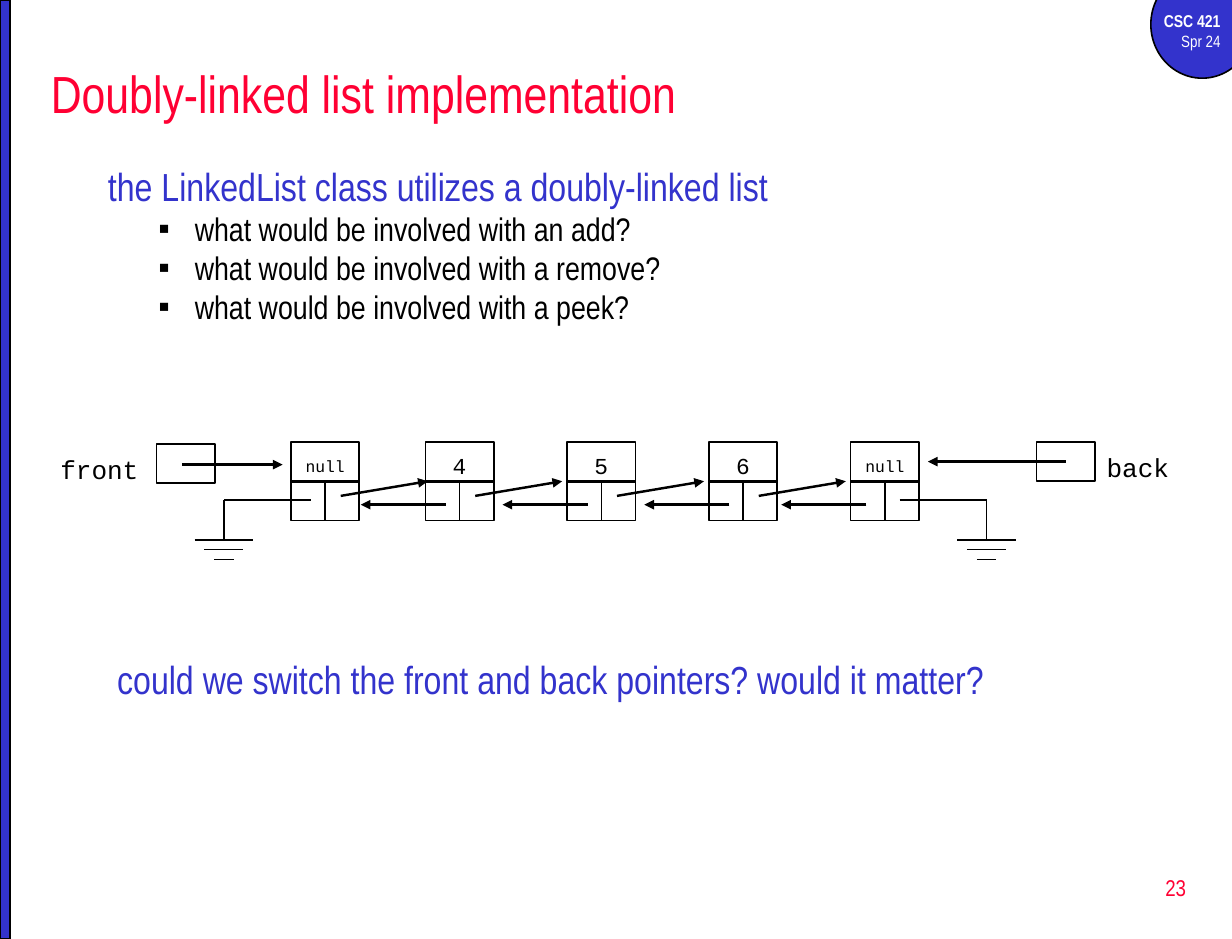
"""Build the slide on a doubly-linked list implementation."""
from dataclasses import dataclass

from lxml import etree
from pptx import Presentation
from pptx.dml.color import RGBColor
from pptx.enum.shapes import MSO_CONNECTOR, MSO_SHAPE
from pptx.enum.text import MSO_ANCHOR, MSO_AUTO_SIZE, PP_ALIGN
from pptx.oxml.ns import qn
from pptx.util import Inches, Pt

RECT, OVAL = MSO_SHAPE.RECTANGLE, MSO_SHAPE.OVAL
STRAIGHT = MSO_CONNECTOR.STRAIGHT
TOP, MIDDLE = MSO_ANCHOR.TOP, MSO_ANCHOR.MIDDLE
LEFT, CENTER, RIGHT = PP_ALIGN.LEFT, PP_ALIGN.CENTER, PP_ALIGN.RIGHT
NO_FIT = MSO_AUTO_SIZE.NONE
COLS, ROWS = 126, 96


@dataclass(frozen=True)
class Theme:
    """Colours, fonts and type sizes."""
    blue: str = "3333CC"
    red: str = "FF0033"
    black: str = "000000"
    white: str = "FFFFFF"
    sans: str = "Arial Narrow"
    mono: str = "Courier New"
    title: float = 32
    head: float = 24
    item: float = 20
    label: float = 16
    value: float = 14
    badge: float = 10.5
    small: float = 10
    thin: float = 1
    thick: float = 1.5


class Deck:
    """Style, current slide and one method per kind of element."""

    def __init__(self, prs, theme):
        self.t = theme
        self.s = prs.slides.add_slide(prs.slide_layouts[1])
        self.cw, self.rh = prs.slide_width / COLS, prs.slide_height / ROWS

    def pos(self, x, y):
        return round(x * self.cw), round(y * self.rh)

    def frame(self, sp, anchor=TOP, top=0.05, bottom=0.05):
        tf = sp.text_frame
        tf.word_wrap, tf.auto_size, tf.vertical_anchor = True, NO_FIT, anchor
        tf.margin_left = tf.margin_right = Inches(0.1)
        tf.margin_top, tf.margin_bottom = Inches(top), Inches(bottom)
        return tf

    def run(self, p, text, size, color, font, bold=False):
        r = p.add_run()
        r.text = text
        r.font.size, r.font.name, r.font.bold = Pt(size), font, bold
        r.font.color.rgb = RGBColor.from_string(color)

    def place(self, sp, x, y, w, h):
        sp.left, sp.top = self.pos(x, y)
        sp.width, sp.height = self.pos(w, h)

    def title(self, text, *box):
        sp = self.s.shapes.title
        self.place(sp, *box)
        p = self.frame(sp, MIDDLE).paragraphs[0]
        p.alignment = LEFT
        self.run(p, text, self.t.title, self.t.red, self.t.sans)

    def heading(self, p, text, start=0):
        p.alignment, p.space_before = LEFT, Pt(5.5)
        pPr = p._p.get_or_add_pPr()
        pPr.set("marL", str(Inches(0.38)))
        pPr.set("indent", str(Inches(start - 0.38)))
        etree.SubElement(pPr, qn("a:buNone"))
        self.run(p, text, self.t.head, self.t.blue, self.t.sans)

    def bullet(self, p, text):
        p.level, p.line_spacing, p.space_before = 1, 0.8, Pt(4.6)
        pPr = p._p.get_or_add_pPr()
        pPr.set("marL", str(Inches(0.81)))
        pPr.set("indent", str(Inches(-0.31)))
        etree.SubElement(pPr, qn("a:buFont"), typeface="Arial")
        etree.SubElement(pPr, qn("a:buChar"), char="▪")
        self.run(p, text, self.t.item, self.t.black, self.t.sans)

    def body(self, head, items, *box):
        sp = self.s.placeholders[1]
        self.place(sp, *box)
        tf = self.frame(sp)
        self.heading(tf.paragraphs[0], head, 0.07)
        for item in items:
            self.bullet(tf.add_paragraph(), item)

    def textbox(self, x, y, w, h, **frame):
        sp = self.s.shapes.add_textbox(*self.pos(x, y), *self.pos(w, h))
        return self.frame(sp, **frame)

    def label(self, text, *box):
        tf = self.textbox(*box, anchor=MIDDLE, top=0.06, bottom=0)
        self.run(tf.paragraphs[0], text, self.t.label, self.t.black, self.t.mono)

    def shape(self, x, y, w, h, kind=RECT, fill=None):
        sp = self.s.shapes.add_shape(kind, *self.pos(x, y), *self.pos(w, h))
        sp.shadow.inherit = False
        if fill:
            sp.fill.solid()
            sp.fill.fore_color.rgb = RGBColor.from_string(fill)
        else:
            sp.fill.background()
        sp.line.color.rgb = RGBColor.from_string(self.t.black)
        sp.line.width = Pt(self.t.thin)
        return sp

    def line(self, x1, y1, x2, y2, arrow=False):
        c = self.s.shapes.add_connector(STRAIGHT, *self.pos(x1, y1), *self.pos(x2, y2))
        c.line.color.rgb = RGBColor.from_string(self.t.black)
        c.line.width = Pt(self.t.thick if arrow else self.t.thin)
        if arrow:
            etree.SubElement(c.line._get_or_add_ln(), qn("a:tailEnd"), type="triangle")
        etree.SubElement(c._element.spPr, qn("a:effectLst"))
        return c

    def node(self, x, y, text):
        links = self.shape(x, y + 4, 7, 4)
        sp = self.shape(x, y, 7, 4.1)
        p = self.frame(sp, MIDDLE, 0.06, 0).paragraphs[0]
        p.alignment = CENTER
        size = self.t.small if text == "null" else self.t.value
        self.run(p, text, size, self.t.black, self.t.mono)
        divider = self.line(x + 3.5, y + 4, x + 3.5, y + 8)
        divider.begin_connect(links, 0)
        divider.end_connect(links, 2)

    def ground(self, x, y, stem):
        self.line(x, y, stem, y)
        self.line(stem, y, stem, y + 4.1)
        for i, half in enumerate((3, 2, 1)):
            self.line(stem - half, y + 4.1 + i, stem + half, y + 4.1 + i)


def main():
    """Lay out the slide and save it."""
    prs = Presentation()
    prs.slide_width, prs.slide_height = Inches(10.5), Inches(8)
    t = Theme()
    d = Deck(prs, t)

    d.shape(117.7, -3, 10.5, 11, OVAL, t.blue)
    tf = d.textbox(116, 0.5, 10, 5.5)
    course, term = tf.paragraphs[0], tf.add_paragraph()
    course.alignment = term.alignment = RIGHT
    d.run(course, "CSC 421", t.badge, t.white, t.sans, True)
    d.run(term, "Spr 24", t.small, t.white, t.sans)
    d.shape(0, 0, 1, ROWS, fill=t.blue)

    d.title("Doubly-linked list implementation", 4, 5, 119, 9)
    d.body("the LinkedList class utilizes a doubly-linked list",
           [f"what would be involved with {what}?"
            for what in ("an add", "a remove", "a peek")], 9, 16, 114.25, 19.2)
    p = d.textbox(96.25, 87.5, 26.25, 6.4, anchor=MIDDLE).paragraphs[0]
    p.alignment = RIGHT
    d.run(p, "23", t.value, t.red, t.sans)

    top = 45.2
    node_xs = (29.75, 43.5, 58, 72.5, 87)
    for x, text in zip(node_xs, ("null", "4", "5", "6", "null")):
        d.node(x, top, text)
    for x in node_xs[:-1]:
        d.line(x + 5.1, top + 5.5, x + 14, top + 4, arrow=True)
    for x in (45.6, 60.1, 74.6, 88.6):
        d.line(x, top + 6.4, x - 8.7, top + 6.4, arrow=True)

    d.label("front", 5, 45.4, 11, 4.4)
    d.shape(16, 45.4, 6, 4)
    d.line(18.6, 47.5, 28.9, 47.5, arrow=True)
    d.label("back", 112, top, 11, 4.4)
    d.shape(106, top, 6, 4)
    d.line(109, 47.2, 94.9, 47.2, arrow=True)
    d.ground(31.8, 51.1, 22.9)
    d.ground(92, 51.1, 100.9)

    p = d.textbox(10.8, 66.4, 114.25, 19.2).paragraphs[0]
    d.heading(p, "could we switch the front and back pointers? would it matter?")
    prs.save("out.pptx")


if __name__ == "__main__":
    main()
